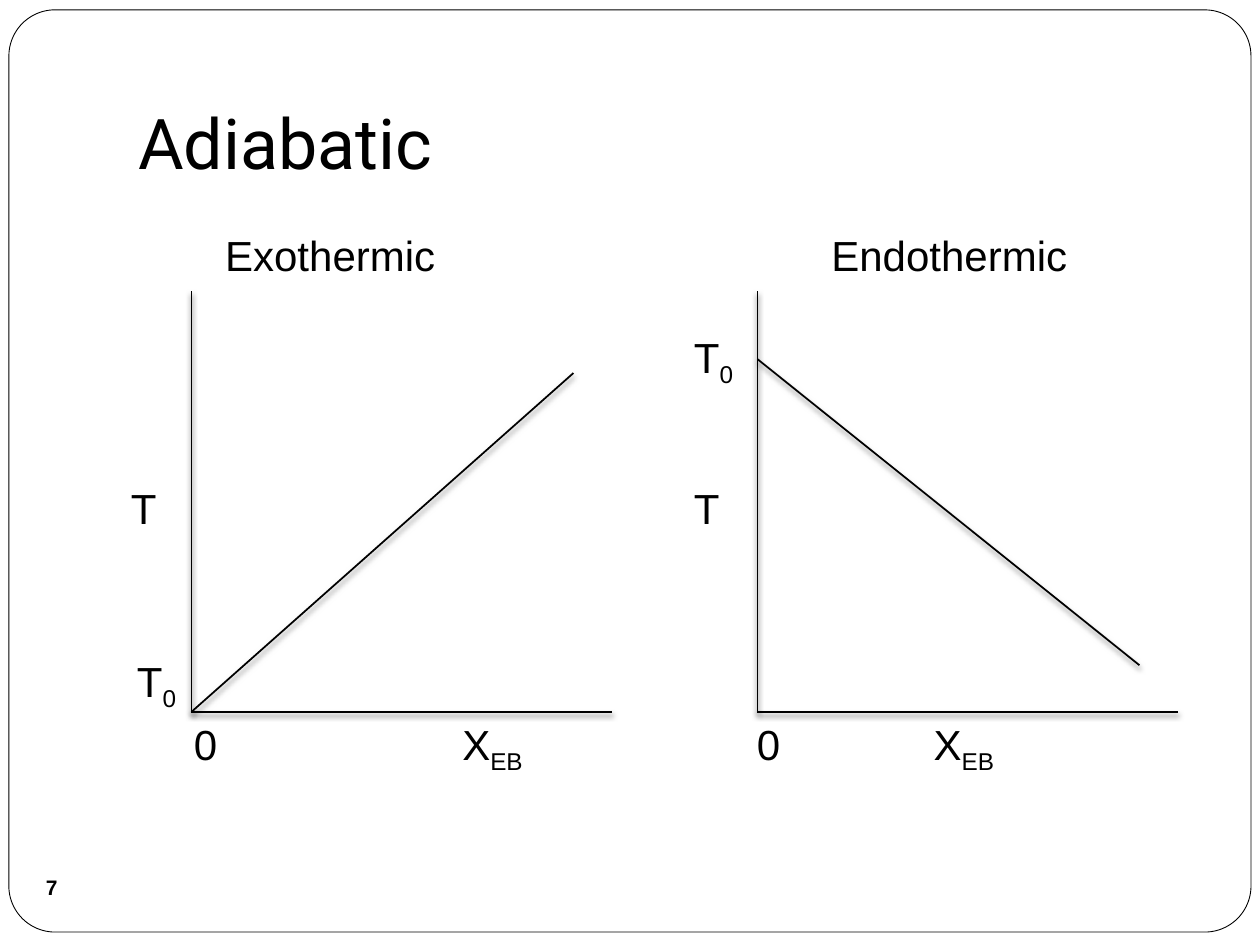
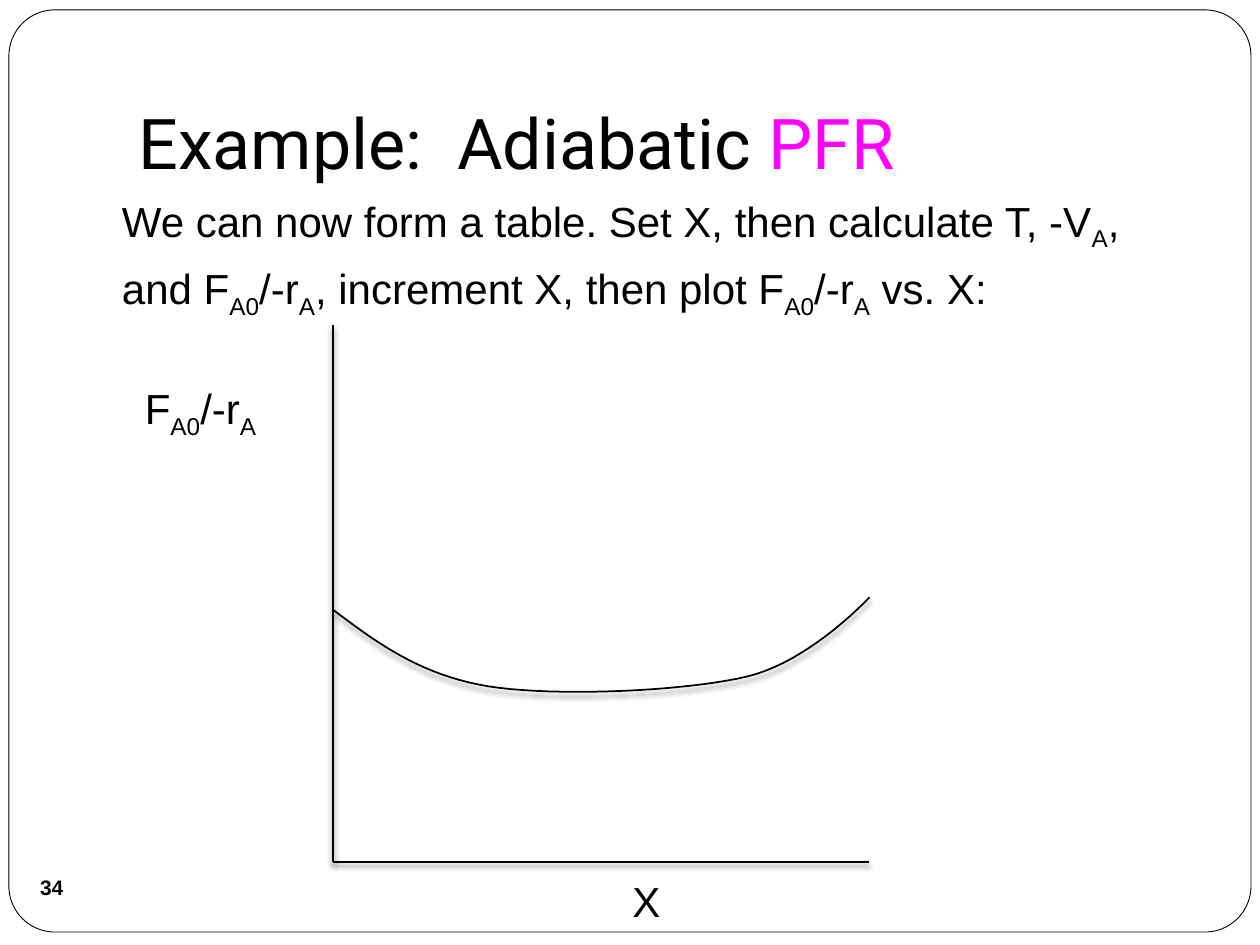
"""Build two slides on adiabatic reactors with hand-drawn graphs."""
import lxml.etree
import pptx
import pptx.dml.color
import pptx.enum.shapes
import pptx.enum.text
import pptx.oxml
import pptx.oxml.ns
import pptx.util

Cm, Pt = pptx.util.Cm, pptx.util.Pt
MSO = pptx.enum.shapes.MSO_SHAPE
ALIGN = pptx.enum.text.PP_ALIGN
ANCHOR = pptx.enum.text.MSO_ANCHOR
AUTO = pptx.enum.text.MSO_AUTO_SIZE

COLORS = {"ink": "000000", "paper": "FFFFFF", "accent": "FF00FF"}
SHADOW = (
    '<a:effectLst %s><a:outerShdw blurRad="38100" dist="25400" dir="5400000" rotWithShape="0">'
    '<a:srgbClr val="%s"><a:alpha val="50000"/></a:srgbClr></a:outerShdw></a:effectLst>'
    % (pptx.oxml.ns.nsdecls("a"), COLORS["ink"])
)


def rgb(name):
    return pptx.dml.color.RGBColor.from_string(COLORS[name])


def bezier(p0, p1, p2, p3, steps=20):
    points = []
    for i in range(1, steps + 1):
        t = i / steps
        weights = ((1 - t) ** 3, 3 * t * (1 - t) ** 2, 3 * t * t * (1 - t), t ** 3)
        points.append(tuple(sum(w * p[k] for w, p in zip(weights, (p0, p1, p2, p3)))
                            for k in (0, 1)))
    return points


class Deck:
    def __init__(self):
        self.prs = pptx.Presentation()
        self.prs.slide_width, self.prs.slide_height = Cm(25.4), Cm(19.05)
        self.s = self.shapes = None

    def new_slide(self, number, *title):
        self.s = self.prs.slides.add_slide(self.prs.slide_layouts[5])
        self.shapes = self.s.shapes
        self.title(title)
        self.badge(number)

    def new_graph(self):
        self.shapes = self.s.shapes.add_group_shape().shapes

    def font(self, r, size, name="Arial", color="ink", bold=False):
        r.font.size, r.font.name, r.font.bold = Pt(size), name, bold
        r.font.color.rgb = rgb(color)

    def title(self, parts):
        sp = self.shapes.title
        sp.left, sp.top, sp.width, sp.height = Cm(2.54), Cm(0.76), Cm(21.59), Cm(3.18)
        tf = sp.text_frame
        tf.auto_size, tf.vertical_anchor, tf.word_wrap = AUTO.NONE, ANCHOR.BOTTOM, True
        tf.margin_left = tf.margin_right = tf.margin_bottom = Cm(0.25)
        tf.margin_top = Cm(0.13)
        p = tf.paragraphs[0]
        p.alignment = ALIGN.LEFT
        for text, color in zip(parts, ("ink", "accent")):
            r = p.add_run()
            r.text = text
            self.font(r, 40, "Roboto", color)

    def frame(self):
        sp = self.shapes.add_shape(MSO.ROUNDED_RECTANGLE, Cm(0.18), Cm(0.2), Cm(25.04), Cm(18.59))
        sp.adjustments[0] = 0.05
        sp.shadow.inherit = False
        sp.fill.solid()
        sp.fill.fore_color.rgb = rgb("paper")
        sp.line.color.rgb = rgb("ink")
        sp.line.width = Pt(0.5)
        sp.element.nvSpPr.cNvPr.set("id", "99")
        self.prs.slide_master.shapes.element.insert(2, sp.element)

    def badge(self, number):
        sp = self.shapes.add_shape(MSO.OVAL, Cm(0.41), Cm(17.25), Cm(1.27), Cm(1.27))
        sp.shadow.inherit = False
        sp.fill.background()
        sp.line.fill.background()
        tf = sp.text_frame
        tf.text = number
        tf.word_wrap, tf.vertical_anchor = False, ANCHOR.MIDDLE
        tf.margin_left = tf.margin_right = tf.margin_top = tf.margin_bottom = 0
        tf.paragraphs[0].alignment = ALIGN.CENTER
        self.font(tf.paragraphs[0].runs[0], 12, bold=True)

    def subscripted(self, p, text):
        """Fill a paragraph, lowering the parts between tildes."""
        for i, part in enumerate(text.split("~")):
            if part:
                r = p.add_run()
                r.text = part
                self.font(r, 24)
                if i % 2:
                    r.font._element.set("baseline", "-25000")

    def label(self, text, x, y, w=1.27):
        tf = self.shapes.add_textbox(Cm(x), Cm(y), Cm(w), Cm(1.27)).text_frame
        tf.word_wrap, tf.auto_size = True, AUTO.SHAPE_TO_FIT_TEXT
        self.subscripted(tf.paragraphs[0], text)

    def body(self, lines, x, y, w, h):
        tf = self.shapes.add_textbox(Cm(x), Cm(y), Cm(w), Cm(h)).text_frame
        tf.word_wrap = True
        for i, line in enumerate(lines):
            p = tf.add_paragraph() if i else tf.paragraphs[0]
            p.alignment, p.space_before = ALIGN.JUSTIFY, Pt(5.8)
            self.subscripted(p, line)

    def stroke(self, sp):
        sp.line.color.rgb = rgb("ink")
        sp.line.width = Pt(1)
        sp.element.spPr.append(pptx.oxml.parse_xml(SHADOW))

    def line(self, x1, y1, x2, y2):
        self.stroke(self.shapes.add_connector(
            pptx.enum.shapes.MSO_CONNECTOR.STRAIGHT, Cm(x1), Cm(y1), Cm(x2), Cm(y2)))

    def axes(self, x, y, length):
        self.line(x, y - length, x, y)
        self.line(x, y, x + length, y)

    def curve(self, start, *segments):
        points = [start]
        for segment in segments:
            points += bezier(points[-1], *segment)
        points = [(Cm(x), Cm(y)) for x, y in points]
        builder = self.shapes.build_freeform(*points[0])
        builder.add_line_segments(points[1:], close=False)
        sp = builder.convert_to_shape()
        sp.fill.background()
        self.stroke(sp)

    def temperature_graph(self, x, slope, labels):
        base = 14.35
        self.new_graph()
        self.axes(x, base, 8.48)
        self.line(x, slope[0], x + 7.7, slope[1])
        for label in labels:
            self.label(*label)


def main():
    deck = Deck()
    deck.new_slide("7", "Adiabatic")
    deck.frame()
    deck.temperature_graph(3.86, (14.35, 7.52), [
        ("T", 2.39, 9.6), ("X~EB~", 9.07, 14.35, 10.13), ("Exothermic", 4.29, 4.5, 4.78),
        ("T~0~", 2.51, 13.08, 2.18), ("0", 3.66, 14.35)])
    deck.temperature_graph(15.27, (7.24, 13.41), [
        ("T", 13.74, 9.6), ("X~EB~", 18.57, 14.35, 1.88), ("Endothermic", 16.51, 4.5, 5.38),
        ("T~0~", 13.74, 6.55, 2.18), ("0", 15.01, 14.35)])

    deck.new_slide("34", "Example:  Adiabatic ", "PFR")
    deck.body(["We can now form a table. Set X, then calculate T, -V~A~, ",
               "and F~A0~/-r~A~, increment X, then plot F~A0~/-r~A~ vs. X:"],
              2.21, 3.81, 22.02, 2.97)
    deck.new_graph()
    deck.axes(6.71, 17.37, 10.81)
    deck.curve((6.71, 12.29),
               ((7.59, 12.95), (8.46, 13.61), (9.86, 13.84)),
               ((11.23, 14.05), (13.79, 13.94), (15.06, 13.64)),
               ((16.33, 13.34), (17.53, 12.04), (17.53, 12.04)))
    deck.label("F~A0~/-r~A~", 2.67, 7.59, 4.11)
    deck.label("X", 12.5, 17.53, 1.47)
    deck.prs.save("out.pptx")


if __name__ == "__main__":
    main()
